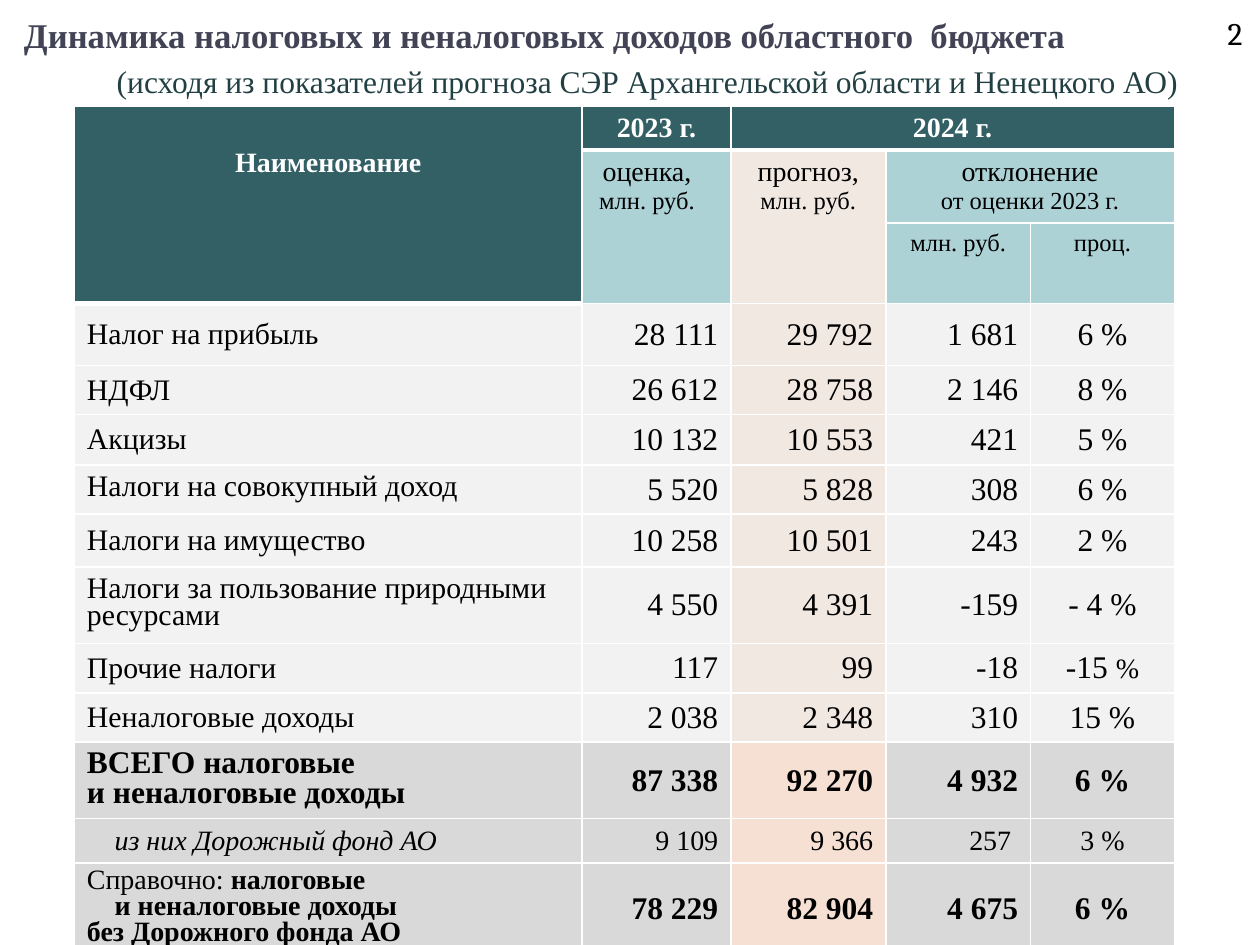
from dataclasses import dataclass
from lxml.etree import SubElement
from pptx import Presentation
from pptx.dml.color import RGBColor as Rgb
from pptx.enum.text import MSO_ANCHOR as Anchor, MSO_AUTO_SIZE as Fit, PP_ALIGN as Align
from pptx.oxml import parse_xml
from pptx.oxml.ns import nsdecls, qn
from pptx.util import Inches, Pt


@dataclass(frozen=True)
class Theme:
    font: str = "Times New Roman"
    page_font: str = "Cambria"
    title: str = "424456"
    sub: str = "224043"
    ink: str = "000000"
    white: str = "FFFFFF"
    head: str = "326065"
    teal: str = "ADD2D6"
    sand: str = "ECDED4"
    sand_alpha: int = 69
    row: str = "F2F2F2"
    total: str = "D9D9D9"
    peach: str = "F5E0D3"
    title_size: float = 19.8
    big: int = 18
    name: int = 17
    mid: int = 16
    small: int = 14


@dataclass
class Run:
    text: str
    size: float
    color: str = Theme.ink
    bold: bool = False
    italic: bool = False
    font: str = Theme.font
    wrap: bool = False  # a line break follows


class Deck:
    def __init__(self, theme):
        self.theme = theme
        self.prs = Presentation()
        self.prs.slide_width, self.prs.slide_height = Inches(10), Inches(7.5)
        self.slide = self.prs.slides.add_slide(self.prs.slide_layouts[5])

    def put(self, frame, lines, align, pitch=None, indents=()):
        """Fill a text frame: one paragraph for each list of runs."""
        frame.word_wrap = True
        for i, runs in enumerate(lines):
            para = frame.paragraphs[0] if i == 0 else frame.add_paragraph()
            para.alignment = align
            if pitch:
                para.line_spacing = Pt(pitch)
            if i < len(indents) and indents[i]:
                para._p.get_or_add_pPr().set("marL", str(Inches(indents[i])))
            for item in runs:
                run = para.add_run()
                run.text = item.text
                font = run.font
                font.name, font.size = item.font, Pt(item.size)
                font.bold, font.italic = item.bold, item.italic
                font.color.rgb = Rgb.from_string(item.color)
                if item.wrap:
                    para.add_line_break()

    def title(self, box, lines, indents):
        shape = self.slide.shapes.title
        shape.left, shape.top, shape.width, shape.height = map(Inches, box)
        frame = shape.text_frame
        frame.auto_size, frame.vertical_anchor = Fit.NONE, Anchor.MIDDLE
        frame.margin_top = frame.margin_bottom = 0
        self.put(frame, lines, Align.CENTER, indents=indents)
        head, sub = frame.paragraphs
        head.alignment = Align.LEFT
        sub.space_before = Pt(3.7)

    def text(self, box, run, align):
        frame = self.slide.shapes.add_textbox(*map(Inches, box)).text_frame
        frame.vertical_anchor = Anchor.BOTTOM
        self.put(frame, [[run]], align)

    def table(self, left, top, cols, rows):
        box = map(Inches, (left, top, sum(cols), sum(rows)))
        table = self.slide.shapes.add_table(len(rows), len(cols), *box).table
        table.first_row = table.horz_banding = False
        for col, size in zip(table.columns, cols):
            col.width = Inches(size)
        for row, size in zip(table.rows, rows):
            row.height = Inches(size)
        return table

    def cell(self, table, at, lines, fill, align=Align.CENTER, anchor=Anchor.TOP,
             span=(1, 1), pitch=None, indents=()):
        row, col = at
        cell = table.cell(row, col)
        if span != (1, 1):
            cell.merge(table.cell(row + span[0] - 1, col + span[1] - 1))
        cell.vertical_anchor = anchor
        self.put(cell.text_frame, lines, align, pitch, indents)
        for r in range(row, row + span[0]):
            for c in range(col, col + span[1]):
                self.paint(table.cell(r, c), fill, r, row + span[0] - 1, col)
        return cell

    def paint(self, cell, fill, row, last, col):
        cell.fill.solid()
        cell.fill.fore_color.rgb = Rgb.from_string(fill)
        props = cell._tc.tcPr
        if fill == self.theme.sand:
            tone = props.find(".//" + qn("a:srgbClr"))
            SubElement(tone, qn("a:alpha")).set("val", str(self.theme.sand_alpha * 1000))
        # Thick rules lie below the heading cells
        over = row == 1 and col > 0 or row == 3 and col == 0
        under = row == 0 and col > 0 or last == 2 and col == 0
        wide = {"T": over, "B": under}
        for i, side in enumerate("LRTB"):
            props.insert(i, parse_xml(
                f'<a:ln{side} {nsdecls("a")} w="{Pt(3 if wide.get(side) else 1)}"><a:solidFill>'
                f'<a:srgbClr val="{self.theme.white}"/></a:solidFill></a:ln{side}>'))

    def save(self):
        self.prs.save("out.pptx")


def head(deck, table):
    t = deck.theme

    def white(text):
        return [Run(text, t.mid, t.white, True)]

    name = deck.cell(table, (0, 0), [white("Наименование")], t.head, span=(3, 1))
    name.margin_top = Inches(0.33)
    deck.cell(table, (0, 1), [white("2023 г.")], t.head)
    deck.cell(table, (0, 2), [white("2024 г.")], t.head, span=(1, 3))

    # Second and third heading rows
    unit = Run("млн. руб.", t.small)
    guess = deck.cell(table, (1, 1), [[Run("оценка,", t.mid, wrap=True), unit]],
                      t.teal, span=(2, 1))
    guess.margin_right = Inches(0.25)
    deck.cell(table, (1, 2), [[Run("прогноз,", t.mid, wrap=True), unit]], t.sand, span=(2, 1))
    deck.cell(table, (1, 3), [[Run("отклонение", t.mid)], [Run("от оценки 2023 г.", t.small)]],
              t.teal, span=(1, 2))
    deck.cell(table, (2, 3), [[unit]], t.teal)
    deck.cell(table, (2, 4), [[Run("проц.", t.small)]], t.teal)


def body(deck, table):
    t = deck.theme
    tight = {"Налоги на совокупный доход", "Налоги за пользование природными ресурсами"}
    taxes = [
        ("Налог на прибыль", "28 111", "29 792", "1 681", "6 %"),
        ("НДФЛ", "26 612", "28 758", "2 146", "8 %"),
        ("Акцизы", "10 132", "10 553", "421", "5 %"),
        ("Налоги на совокупный доход", "5 520", "5 828", "308", "6 %"),
        ("Налоги на имущество", "10 258", "10 501", "243", "2 %"),
        ("Налоги за пользование природными ресурсами", "4 550", "4 391", "-159", "- 4 %"),
        ("Прочие налоги", "117", "99", "-18", "-15 %"),
        ("Неналоговые доходы", "2 038", "2 348", "310", "15 %"),
    ]

    def line(row, lines, values, fill, accent, size, bold, pitch=None, indents=()):
        deck.cell(table, (row, 0), lines, fill, Align.LEFT, Anchor.MIDDLE,
                  pitch=pitch, indents=indents)
        for col, value in enumerate(values, 1):
            runs = [Run(value, size, bold=bold)]
            if value == "-15 %":
                runs = [Run("-15 ", size), Run("%", t.mid)]
            deck.cell(table, (row, col), [runs], accent if col == 2 else fill,
                      Align.CENTER if col == 4 else Align.RIGHT, Anchor.MIDDLE)

    for row, (name, *values) in enumerate(taxes, 3):
        line(row, [[Run(name, t.name)]], values, t.row, t.sand, t.big, False,
             15 if name in tight else None)

    # Totals
    def bold(text, size):
        return Run(text, size, bold=True)

    line(11, [[bold("ВСЕГО налоговые", t.big)], [bold("и неналоговые доходы", t.big)]],
         ("87 338", "92 270", "4 932", "6 %"), t.total, t.peach, t.big, True, 17)
    line(12, [[Run("из них Дорожный фонд АО", t.mid, italic=True)]],
         ("9 109", "9 366", "257 ", "3 %"), t.total, t.peach, t.mid, False, indents=(0.22,))
    line(13, [[Run("Справочно: ", t.mid), bold("налоговые", t.mid)],
              [bold("и неналоговые доходы", t.mid)], [bold("без Дорожного фонда АО", t.mid)]],
         ("78 229", "82 904", "4 675", "6 %"), t.total, t.peach, t.big, True, 15, (0, 0.22))


def main():
    t = Theme()
    deck = Deck(t)
    deck.title((0.02, 0.12, 9.98, 0.66), [
        [Run("Динамика налоговых и неналоговых доходов областного  бюджета",
             t.title_size, t.title, True)],
        [Run("(исходя из показателей прогноза СЭР Архангельской области и Ненецкого АО)",
             t.big, t.sub)],
    ], (0.07, 0.26))
    table = deck.table(0.59, 0.84, (4.03, 1.18, 1.23, 1.15, 1.14),
                       (0.35, 0.58, 0.64, 0.49, 0.39, 0.4, 0.39, 0.42, 0.61,
                        0.39, 0.39, 0.61, 0.35, 0.7))
    head(deck, table)
    body(deck, table)
    # Page number
    deck.text((7.63, 0, 2.33, 0.46), Run("2", t.big, font=t.page_font), Align.RIGHT)
    deck.save()


if __name__ == "__main__":
    main()
